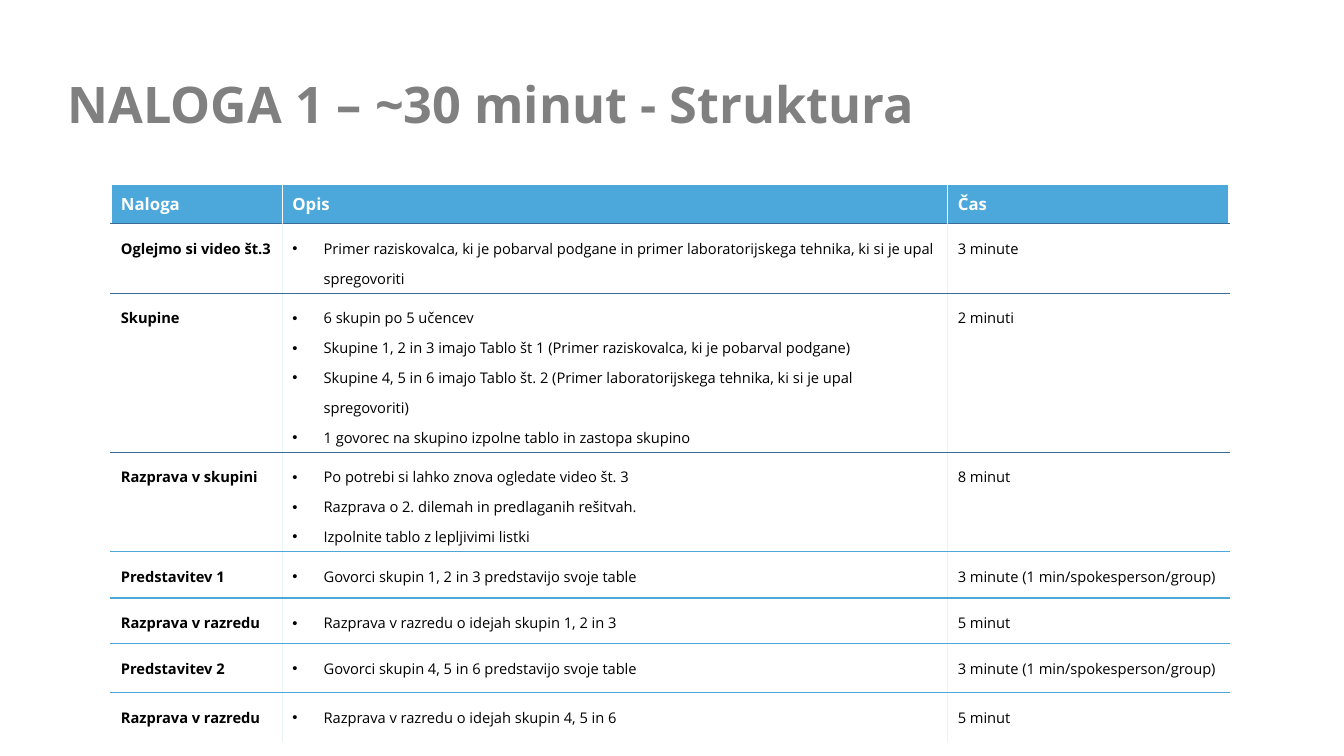
from pptx import Presentation
from pptx.dml.color import RGBColor as RGB
from pptx.enum.text import MSO_ANCHOR as ANCHOR, MSO_AUTO_SIZE as AUTO, PP_ALIGN as ALIGN
from pptx.oxml.ns import qn
from pptx.util import Inches, Pt
from lxml.etree import SubElement

COLORS = {"gray": "808080", "blue": "4CA7DA", "navy": "396B99",
          "pale": "E8F4F5", "white": "FFFFFF", "black": "000000"}
FORMATS = {
    "title": {"size": Pt(36), "bold": True, "color": "gray"},
    "head": {"size": Pt(12), "bold": True, "color": "white"},
    "label": {"size": Pt(10.5), "bold": True, "color": "black"},
    "body": {"size": Pt(10.5), "bold": False, "color": "black"},
}
HEADERS = ["Naloga", "Opis", "Čas"]
ROWS = [
    ("Oglejmo si video št.3",
     ["Primer raziskovalca, ki je pobarval podgane in primer laboratorijskega tehnika, ki si je upal spregovoriti"],
     "3 minute"),
    ("Skupine",
     ["6 skupin po 5 učencev",
      "Skupine 1, 2 in 3 imajo Tablo št 1 (Primer raziskovalca, ki je pobarval podgane)",
      "Skupine 4, 5 in 6 imajo Tablo št. 2 (Primer laboratorijskega tehnika, ki si je upal spregovoriti)",
      "1 govorec na skupino izpolne tablo in zastopa skupino"],
     "2 minuti"),
    ("Razprava v skupini",
     ["Po potrebi si lahko znova ogledate video št. 3",
      "Razprava o 2. dilemah in predlaganih rešitvah.",
      "Izpolnite tablo z lepljivimi listki"],
     "8 minut"),
    ("Predstavitev 1", ["Govorci skupin 1, 2 in 3 predstavijo svoje table"],
     "3 minute (1 min/spokesperson/group)"),
    ("Razprava v razredu", ["Razprava v razredu o idejah skupin 1, 2 in 3"], "5 minut"),
    ("Predstavitev 2", ["Govorci skupin 4, 5 in 6 predstavijo svoje table"],
     "3 minute (1 min/spokesperson/group)"),
    ("Razprava v razredu", ["Razprava v razredu o idejah skupin 4, 5 in 6"], "5 minut"),
]
WIDTHS = [1.7, 6.6, 2.79]
HEIGHTS = [0.39, 0.47, 1.35, 0.93, 0.46, 0.45, 0.49, 0.49]
RULES = ["navy"] * 3 + ["blue"] * 4 + [None]


class Deck:
    font = "Open Sans"

    def __init__(self, prs):
        self.s = prs.slides.add_slide(prs.slide_layouts[5])

    def run(self, p, text, style):
        r = p.add_run()
        r.text = text
        r.font.name = self.font
        for key, value in FORMATS[style].items():
            if key == "color":
                r.font.color.rgb = RGB.from_string(COLORS[value])
            else:
                setattr(r.font, key, value)

    def title(self, text, box):
        sp = self.s.shapes.title
        for key, value in zip(("left", "top", "width", "height"), box):
            setattr(sp, key, Inches(value))
        tf = sp.text_frame
        for key, value in {"word_wrap": True, "auto_size": AUTO.NONE,
                           "vertical_anchor": ANCHOR.TOP}.items():
            setattr(tf, key, value)
        p = tf.paragraphs[0]
        p.alignment = ALIGN.LEFT
        self.run(p, text, "title")

    def bullet(self, p):
        pPr = p._p.get_or_add_pPr()
        pPr.set("marL", str(Inches(0.31)))
        pPr.set("indent", str(-Inches(0.31)))
        SubElement(pPr, qn("a:buFont"), typeface="Arial")
        SubElement(pPr, qn("a:buChar"), char="•")

    def borders(self, cell, edges):
        tcPr = cell._tc.get_or_add_tcPr()
        for side in "LRTB":
            if edges.get(side):
                ln = SubElement(tcPr, qn(f"a:ln{side}"), w=str(Pt(1)))
                fill = SubElement(ln, qn("a:solidFill"))
                SubElement(fill, qn("a:srgbClr"), val=COLORS[edges[side]])

    def cell(self, cell, lines, style, bulleted=False, spacing=None):
        tf = cell.text_frame
        for i, line in enumerate(lines):
            p = tf.add_paragraph() if i else tf.paragraphs[0]
            if bulleted:
                self.bullet(p)
            if spacing:
                p.line_spacing = spacing
            self.run(p, line, style)

    def table(self, left, top):
        frame = self.s.shapes.add_table(len(HEIGHTS), len(WIDTHS), Inches(left), Inches(top),
                                        Inches(sum(WIDTHS)), Inches(sum(HEIGHTS)))
        table = frame.table
        table.horz_banding = False
        for col, width in zip(table.columns, WIDTHS):
            col.width = Inches(width)
        for row, height in zip(table.rows, HEIGHTS):
            row.height = Inches(height)
        last = len(WIDTHS) - 1
        for i, values in enumerate([HEADERS, *ROWS]):
            inner = "pale" if i else "white"
            for j, value in enumerate(values):
                cell = table.cell(i, j)
                self.borders(cell, {"L": inner if j else "white",
                                    "R": inner if j < last else "white",
                                    "T": RULES[i - 1] if i else "white", "B": RULES[i]})
                if i:
                    cell.fill.background()
                    lines = value if j == 1 else [value]
                    self.cell(cell, lines, "body" if j else "label", j == 1, 1.5)
                else:
                    cell.fill.solid()
                    cell.fill.fore_color.rgb = RGB.from_string(COLORS["blue"])
                    cell.vertical_anchor = ANCHOR.MIDDLE
                    self.cell(cell, [value], "head")


def main():
    prs = Presentation()
    prs.slide_width, prs.slide_height = Inches(13.33), Inches(7.5)
    deck = Deck(prs)
    deck.title("NALOGA 1 – ~30 minut - Struktura", (0.57, 0.68, 12.19, 1.15))
    deck.table(1.1, 1.83)
    prs.save("out.pptx")


if __name__ == "__main__":
    main()
